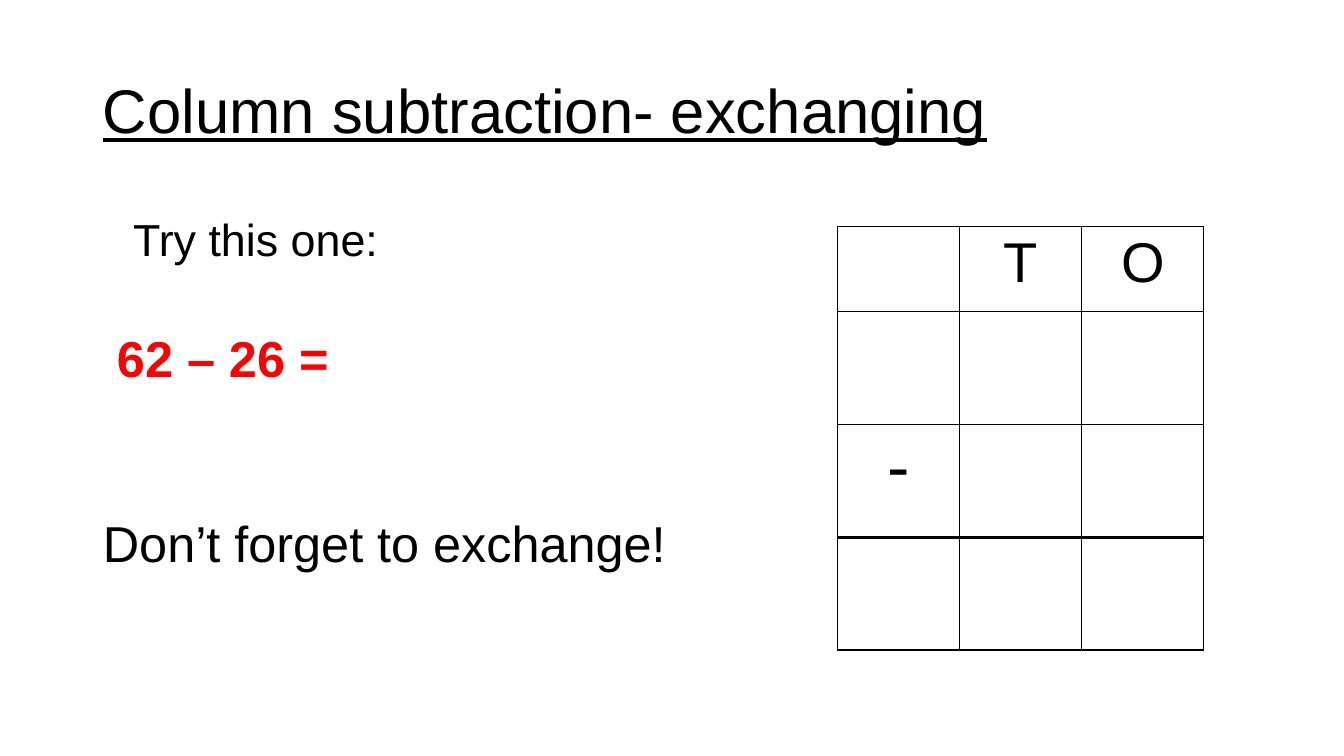
from pptx import Presentation
from pptx.dml.color import RGBColor
from pptx.enum.text import MSO_ANCHOR, MSO_AUTO_SIZE, PP_ALIGN
from pptx.oxml.ns import qn
from pptx.util import Inches, Pt
from lxml.etree import SubElement

# Content
TITLE = "Column subtraction- exchanging"
BLACK = RGBColor(0, 0, 0)
RED = RGBColor(255, 0, 0)
# text, size, colour, bold, left indent in inches, points of space before
BODY_LINES = [
    ("Try this one:", 32, BLACK, False, 0.3, 0),
    ("62 – 26 =", 36, RED, True, 0.14, 44),
    ("Don’t forget to exchange!", 36, BLACK, False, 0, 89),
]
GRID = [
    ["", "T", "O"],
    ["", "", ""],
    ["-", "", ""],
    ["", "", ""],
]
COLUMN_WIDTH = 1.21
ROW_HEIGHTS = [0.84, 1.12, 1.12, 1.12]
ANSWER_ROW = 3
THIN, THICK = 1, 2.25


def write(paragraph, text, size, color=BLACK, bold=False, underline=False,
          align=PP_ALIGN.LEFT, line_spacing=1.0, space_before=0):
    paragraph.alignment = align
    paragraph.line_spacing = line_spacing
    paragraph.space_before = Pt(space_before)
    paragraph.space_after = Pt(0)
    run = paragraph.add_run()
    run.text = text
    run.font.name = "Arial"
    run.font.size = Pt(size)
    run.font.bold = bold
    run.font.underline = underline
    run.font.color.rgb = color


def place(shape, left, top, width, height):
    shape.left, shape.top = Inches(left), Inches(top)
    shape.width, shape.height = Inches(width), Inches(height)
    shape.text_frame.auto_size = MSO_AUTO_SIZE.NONE
    shape.text_frame.word_wrap = True


def remove_bullet(paragraph, indent):
    properties = paragraph._p.get_or_add_pPr()
    properties.set("marL", str(Inches(indent)))
    properties.set("indent", "0")
    SubElement(properties, qn("a:buNone"))


def set_borders(cell, **widths):
    properties = cell._tc.get_or_add_tcPr()
    for side in ("L", "R", "T", "B"):
        line = SubElement(properties, qn(f"a:ln{side}"),
                          w=str(Pt(widths.get(side, THIN))))
        fill = SubElement(line, qn("a:solidFill"))
        SubElement(fill, qn("a:srgbClr"), val=str(BLACK))


presentation = Presentation()
presentation.slide_width = Inches(13.33)
presentation.slide_height = Inches(7.5)
slide = presentation.slides.add_slide(presentation.slide_layouts[1])

# Title
title = slide.shapes.title
place(title, 0.92, 0.4, 11.5, 1.45)
title.text_frame.vertical_anchor = MSO_ANCHOR.MIDDLE
write(title.text_frame.paragraphs[0], TITLE, 44, underline=True, line_spacing=0.9)

# Instructions
body = slide.placeholders[1]
place(body, 0.92, 2, 11.5, 4.76)
body.text_frame.margin_top = Inches(0.1)
for index, (text, size, color, bold, indent, space) in enumerate(BODY_LINES):
    frame = body.text_frame
    paragraph = frame.add_paragraph() if index else frame.paragraphs[0]
    write(paragraph, text, size, color=color, bold=bold, space_before=space)
    remove_bullet(paragraph, indent)

# Place-value grid
table = slide.shapes.add_table(
    len(GRID), len(GRID[0]), Inches(8.31), Inches(2.25),
    Inches(COLUMN_WIDTH * len(GRID[0])), Inches(sum(ROW_HEIGHTS))).table
table.first_row = False
table.horz_banding = False
for column in table.columns:
    column.width = Inches(COLUMN_WIDTH)
for row_index, (row, height) in enumerate(zip(GRID, ROW_HEIGHTS)):
    table.rows[row_index].height = Inches(height)
    for column_index, text in enumerate(row):
        cell = table.cell(row_index, column_index)
        set_borders(cell,
                    T=THICK if row_index == ANSWER_ROW else THIN,
                    B=THICK if row_index == ANSWER_ROW - 1 else THIN)
        cell.fill.background()
        if text:
            write(cell.text_frame.paragraphs[0], text, 48 if text == "-" else 40,
                  align=PP_ALIGN.CENTER)

presentation.save("out.pptx")
